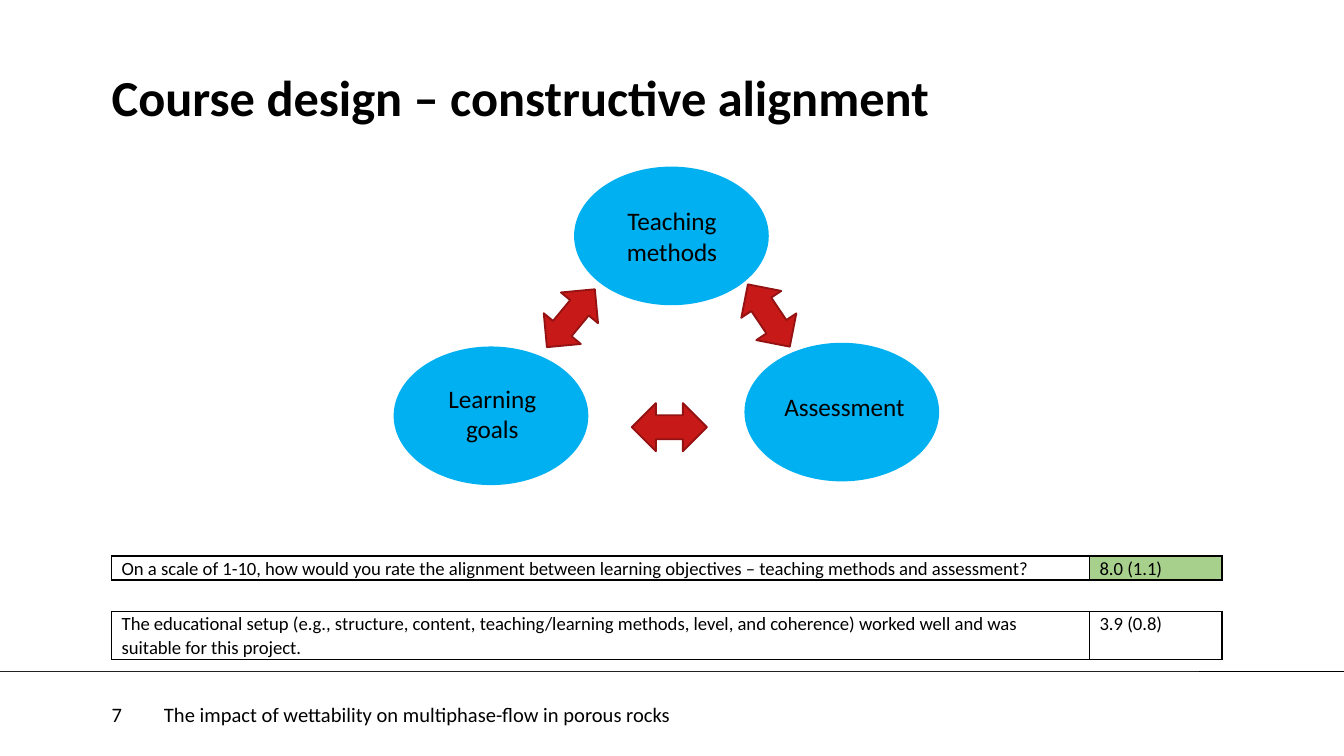
import dataclasses

import lxml.etree
import pptx
import pptx.dml.color
import pptx.enum.shapes
import pptx.enum.text
import pptx.oxml.ns
import pptx.util

Cm = pptx.util.Cm
Pt = pptx.util.Pt
MSO_SHAPE = pptx.enum.shapes.MSO_SHAPE
ANCHOR = pptx.enum.text.MSO_ANCHOR
ALIGN = pptx.enum.text.PP_ALIGN
qn = pptx.oxml.ns.qn


@dataclasses.dataclass(frozen=True)
class Theme:
    font: str = "Calibri"
    ink: str = "000000"
    paper: str = "FFFFFF"
    bubble: str = "00B0F0"
    arrow: str = "C81919"
    arrow_edge: str = "941212"
    good_score: str = "A8D08D"
    title_size: float = 27
    bubble_size: float = 13.5
    footer_size: float = 11
    table_size: float = 10


def rgb(value):
    return pptx.dml.color.RGBColor.from_string(value)


def format_text(frame, text, *, font, size, color, bold=False, align=ALIGN.LEFT,
                anchor=ANCHOR.TOP, wrap=True, insets=(0, 0, 0, 0),
                line_spacing=None, space_after=None):
    frame.word_wrap = wrap
    frame.vertical_anchor = anchor
    (frame.margin_left, frame.margin_top,
     frame.margin_right, frame.margin_bottom) = map(Cm, insets)
    frame.text = text
    for paragraph in frame.paragraphs:
        paragraph.alignment = align
        paragraph.line_spacing = line_spacing
        paragraph.space_after = space_after
        paragraph.font.name = font
        paragraph.font.size = Pt(size)
        paragraph.font.bold = bold
        paragraph.font.color.rgb = rgb(color)


class SlideBuilder:
    def __init__(self, slide, theme):
        self.slide = slide
        self.theme = theme

    def fill_frame(self, frame, text, size, **style):
        format_text(frame, text, font=self.theme.font, size=size,
                    color=self.theme.ink, **style)

    def text(self, text, box, size, **style):
        label = self.slide.shapes.add_textbox(*map(Cm, box))
        self.fill_frame(label.text_frame, text, size, **style)

    def shape(self, preset, box, fill, edge=None, rotation=0):
        shape = self.slide.shapes.add_shape(preset, *map(Cm, box))
        shape.shadow.inherit = False
        shape.rotation = rotation
        shape.fill.solid()
        shape.fill.fore_color.rgb = rgb(fill)
        if edge:
            shape.line.color.rgb = rgb(edge)
            shape.line.width = Pt(1)
        else:
            shape.line.fill.background()
        return shape

    def rule(self, y, width):
        rule = self.slide.shapes.add_connector(
            pptx.enum.shapes.MSO_CONNECTOR.STRAIGHT, 0, Cm(y), Cm(width), Cm(y))
        rule.line.color.rgb = rgb(self.theme.ink)
        rule.line.width = Pt(0.25)
        properties = rule._element.find(qn("p:spPr"))
        lxml.etree.SubElement(properties, qn("a:effectLst"))

    def footer(self, text, box, left_inset=0):
        band = self.shape(MSO_SHAPE.RECTANGLE, box, self.theme.paper)
        self.fill_frame(band.text_frame, text, self.theme.footer_size,
                        anchor=ANCHOR.MIDDLE, insets=(left_inset, 0, 0, 0))

    def bubble(self, text, box, label_box):
        self.shape(MSO_SHAPE.OVAL, box, self.theme.bubble)
        self.text(text, label_box, self.theme.bubble_size, align=ALIGN.CENTER,
                  wrap=False, insets=(0.25, 0.13, 0.25, 0.13))

    def arrow(self, left, top, rotation):
        self.shape(MSO_SHAPE.LEFT_RIGHT_ARROW, (left, top, 1.42, 0.91),
                   self.theme.arrow, self.theme.arrow_edge, rotation)

    def border(self, cell):
        properties = cell._tc.get_or_add_tcPr()
        for side in ("lnL", "lnR", "lnT", "lnB"):
            line = lxml.etree.SubElement(properties, qn(f"a:{side}"), w=str(Pt(1)))
            fill = lxml.etree.SubElement(line, qn("a:solidFill"))
            lxml.etree.SubElement(fill, qn("a:srgbClr"), val=self.theme.ink)

    def rating(self, question, score, top, height, score_fill=None):
        widths = (18.48, 2.5)
        table = self.slide.shapes.add_table(
            1, 2, Cm(2.11), Cm(top), Cm(sum(widths)), Cm(height)).table
        table.first_row = False
        table.horz_banding = False
        for column, width in zip(table.columns, widths):
            column.width = Cm(width)
        for cell, text, fill in zip(table.rows[0].cells, (question, score),
                                    (None, score_fill)):
            self.fill_frame(cell.text_frame, text, self.theme.table_size,
                            line_spacing=1.07, space_after=Pt(8))
            cell.margin_left = cell.margin_right = Cm(0.19)
            cell.margin_top = cell.margin_bottom = 0
            self.border(cell)
            if fill:
                cell.fill.solid()
                cell.fill.fore_color.rgb = rgb(fill)
            else:
                cell.fill.background()


def main():
    deck = pptx.Presentation()
    deck.slide_width = Cm(25.4)
    deck.slide_height = Cm(14.29)
    theme = Theme()
    page = SlideBuilder(deck.slides.add_slide(deck.slide_layouts[6]), theme)

    page.rule(12.68, 25.4)
    page.text("Course design – constructive alignment", (2.11, 1.45, 20.98, 2.03),
              theme.title_size, bold=True, line_spacing=Pt(27))
    page.footer("The impact of wettability on multiphase-flow in porous rocks",
                (3.1, 12.7, 19.56, 1.59))
    page.footer("7", (0, 12.7, 3.1, 1.59), left_inset=2.11)

    page.rating("On a scale of 1-10, how would you rate the alignment between learning "
                "objectives – teaching methods and assessment?",
                "8.0 (1.1)", 10.51, 0.45, theme.good_score)
    page.rating("The educational setup (e.g., structure, content, teaching/learning "
                "methods, level, and coherence) worked well and was suitable for this "
                "project.", "3.9 (0.8)", 11.56, 0.9)

    bubble_size = (3.68, 2.62)
    page.bubble("Learning\ngoals", (7.44, 6.55, *bubble_size), (8.15, 7.11, 2.31, 1.42))
    page.bubble("Teaching\nmethods", (10.85, 3.15, *bubble_size), (11.58, 3.76, 2.24, 1.42))
    page.bubble("Assessment", (14.07, 6.48, *bubble_size), (14.55, 7.26, 2.82, 0.84))

    for left, top, rotation in ((10.08, 5.56, 309.6), (13.82, 5.51, 56.1),
                                (11.94, 7.62, 180)):
        page.arrow(left, top, rotation)

    deck.save("out.pptx")


if __name__ == "__main__":
    main()
